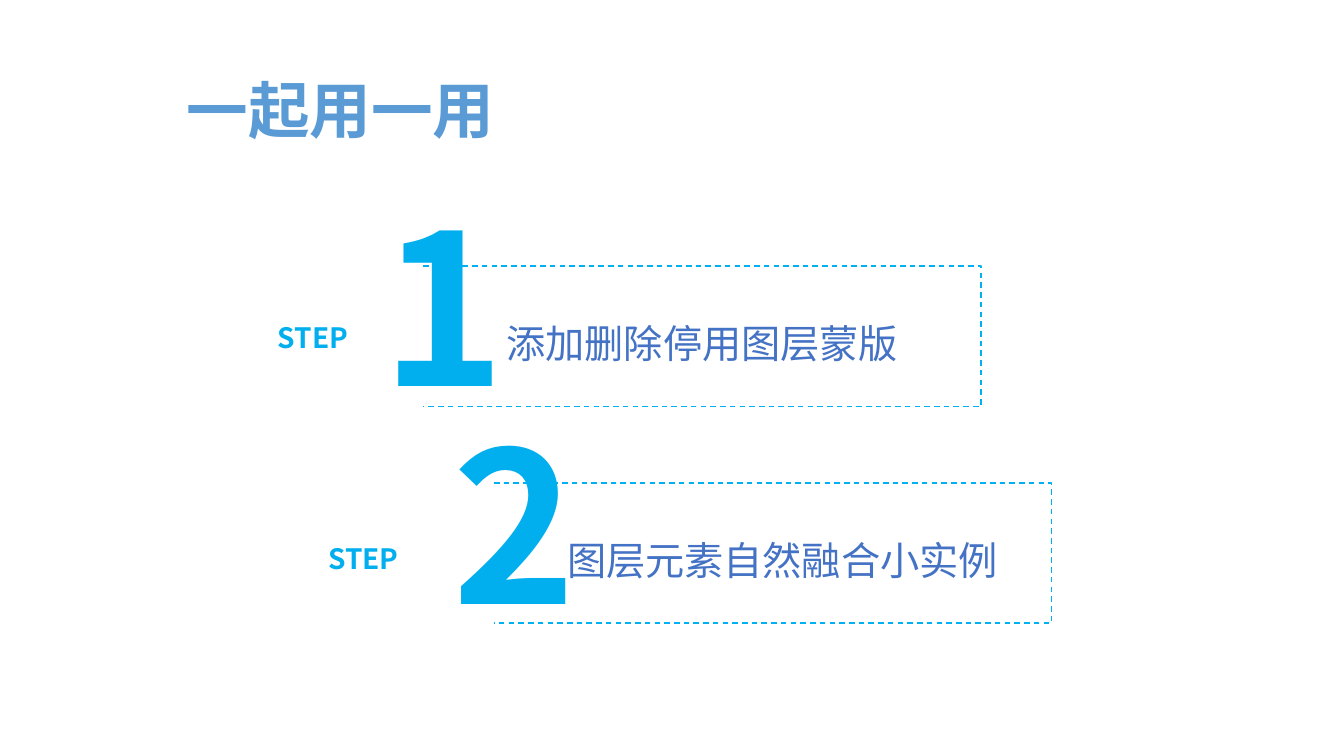
from dataclasses import dataclass
from lxml.etree import SubElement
from pptx import Presentation
from pptx.dml.color import RGBColor as RGB
from pptx.enum.dml import MSO_LINE_DASH_STYLE as Dash
from pptx.enum.text import MSO_ANCHOR as Anchor, PP_ALIGN as Align
from pptx.oxml.ns import qn
from pptx.util import Inches, Pt


@dataclass(frozen=True)
class Theme:
    title: RGB = RGB(0x5B, 0x9B, 0xD5)
    edge: RGB = RGB(0x00, 0xB0, 0xF0)
    step: RGB = RGB(0x01, 0xAF, 0xEE)
    body: RGB = RGB(0x44, 0x72, 0xC4)
    head_size: int = 44
    body_size: int = 28
    step_size: int = 20
    digit_size: int = 150
    asian: str = "Noto Sans CJK SC"


def write(shape, text, face, size, color, bold, space, align, pad):
    frame = shape.text_frame
    frame.word_wrap = True
    frame.vertical_anchor = Anchor.MIDDLE
    (frame.margin_left, frame.margin_top,
     frame.margin_right, frame.margin_bottom) = [Inches(side) for side in pad]
    frame.text = text
    para = frame.paragraphs[0]
    para.alignment = align
    para.line_spacing = space
    font = para.font
    font.name, font.size, font.bold = face, Pt(size), bold
    font.color.rgb = color
    props = para._p.pPr.find(qn("a:defRPr"))
    SubElement(props, qn("a:ea")).set("typeface", theme.asian)


theme = Theme()
deck = Presentation()
deck.slide_width, deck.slide_height = Inches(13.33), Inches(7.5)
slide = deck.slides.add_slide(deck.slide_layouts[5])

title = slide.shapes.title
title.left, title.top, title.width, title.height = [
    Inches(n) for n in (1.75, 0.4, 8.62, 1.45)]
write(title, "一起用一用", "Calibri", theme.head_size, theme.title, True,
      0.9, Align.LEFT, (0.1, 0.05, 0.1, 0.05))

wide, high = 5.53, 1.39
steps = [
    ("添加删除停用图层蒙版", (4.2, 2.64), (2.35, 2.66), (3.69, 1.85),
     (0.12, 0.05, 0.12, 0.05)),
    ("图层元素自然融合小实例", (4.9, 4.79), (2.85, 4.85), (4.39, 4.01),
     (0.39, 0.2, 0.2, 0.2)),
]
for count, (text, box, tag, digit, pad) in enumerate(steps, 1):
    group = slide.shapes.add_group_shape().shapes

    x, y = box
    path = group.build_freeform(Inches(x), Inches(y))
    path.add_line_segments(
        [(Inches(x + wide * i), Inches(y + high * j))
         for i, j in ((1, 0), (1, 1), (0, 1))], close=False)
    panel = path.convert_to_shape()
    panel.shadow.inherit = False
    panel.fill.background()
    panel.line.color.rgb = theme.edge
    panel.line.width = Pt(1)
    panel.line.dash_style = Dash.DASH
    write(panel, text, "Arial", theme.body_size, theme.body, False,
          1.3, Align.CENTER, pad)

    label = group.add_textbox(*[Inches(n) for n in (*tag, 1.51, 1.35)])
    write(label, "STEP", theme.asian, theme.step_size, theme.step, True,
          0.9, Align.CENTER, (0.1, 0.07, 0.1, 0))

    number = group.add_textbox(*[Inches(n) for n in (*digit, 0.81, 2.62)])
    write(number, str(count), "Noto Sans CJK JP", theme.digit_size, theme.step,
          True, 0.9, Align.CENTER, (0.1, 0.05, 0.1, 0.05))

deck.save("out.pptx")
